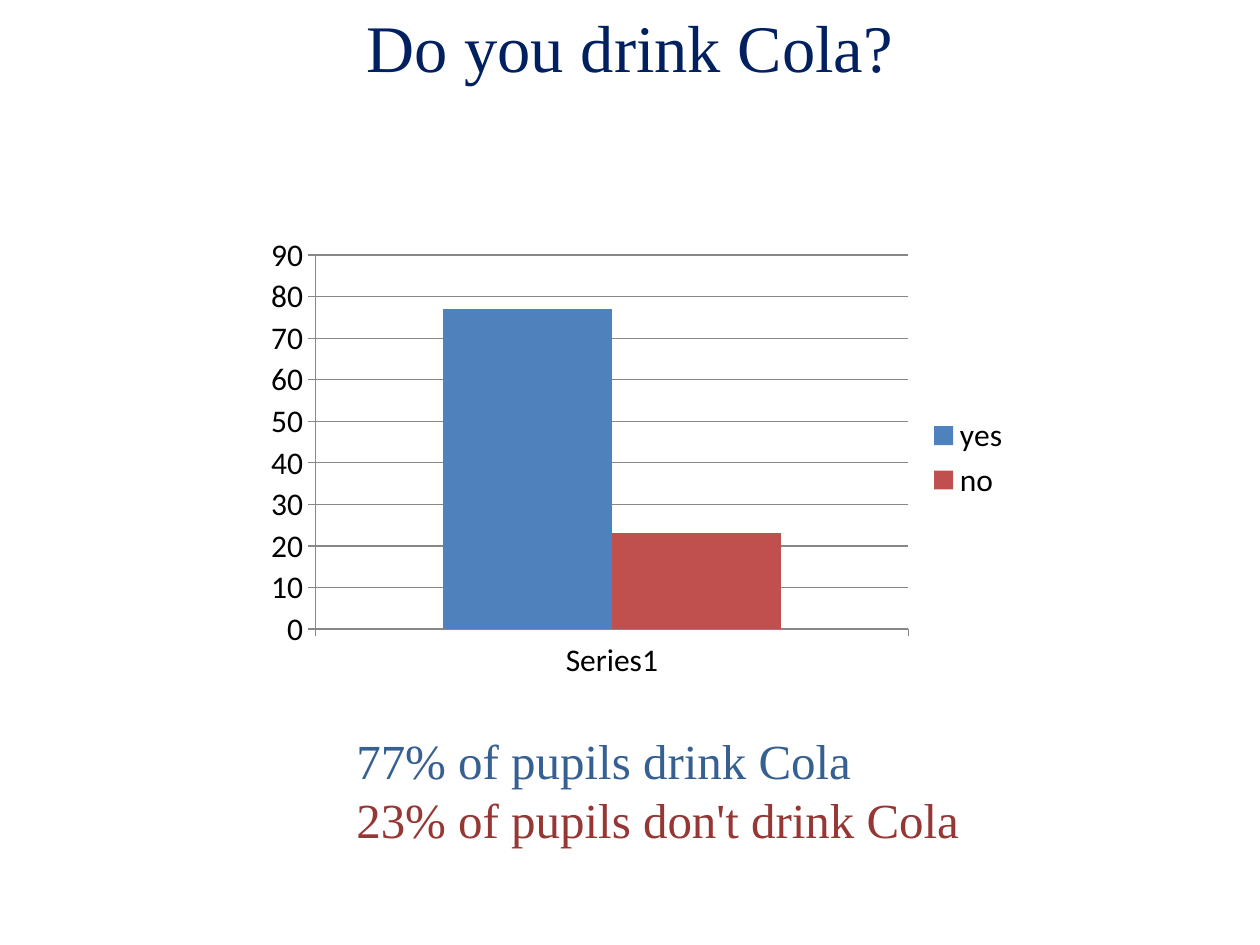
from pptx import Presentation
from pptx.chart.data import CategoryChartData
from pptx.dml.color import RGBColor
from pptx.enum.chart import XL_CHART_TYPE, XL_LEGEND_POSITION, XL_TICK_MARK
from pptx.enum.text import PP_ALIGN
from pptx.util import Inches, Pt

COLUMNS = XL_CHART_TYPE.COLUMN_CLUSTERED
RIGHT = XL_LEGEND_POSITION.RIGHT
OUTSIDE = XL_TICK_MARK.OUTSIDE
LEFT, CENTER = PP_ALIGN.LEFT, PP_ALIGN.CENTER


def rgb(value):
    return RGBColor.from_string(value)


class SurveySlide:
    text_font, chart_font = "Times New Roman", "Calibri"
    axis_color = "878787"

    def __init__(self, prs):
        self.width, self.height = prs.slide_width, prs.slide_height
        self.s = prs.slides.add_slide(prs.slide_layouts[6])

    def box(self, x, y, w, h):
        """Turn shares of the slide's size into lengths."""
        return (int(x * self.width), int(y * self.height),
                int(w * self.width), int(h * self.height))

    def text(self, area, lines, size, align=LEFT):
        """Write (text, colour) pairs, one paragraph each."""
        tf = self.s.shapes.add_textbox(*self.box(*area)).text_frame
        tf.word_wrap = True
        tf.text = "\n".join(line for line, _ in lines)
        for p, (_, color) in zip(tf.paragraphs, lines):
            p.alignment = align
            font = p.runs[0].font
            font.name, font.size = self.text_font, Pt(size)
            font.color.rgb = rgb(color)

    def line(self, fmt):
        fmt.line.color.rgb = rgb(self.axis_color)
        fmt.line.width = Pt(0.75)

    def columns(self, area, category, answers, top, step):
        """Draw one column per (name, value, colour) answer."""
        data = CategoryChartData(number_format="0")
        data.categories = [category]
        for name, value, _ in answers:
            data.add_series(name, [value])
        chart = self.s.shapes.add_chart(COLUMNS, *self.box(*area), data).chart
        chart.has_title = False
        chart.font.name, chart.font.size = self.chart_font, Pt(18)
        chart.font.color.rgb = rgb("000000")
        chart.has_legend = True
        chart.legend.position = RIGHT
        chart.legend.include_in_layout = False

        for axis in (chart.category_axis, chart.value_axis):
            axis.major_tick_mark = OUTSIDE
            self.line(axis.format)
        axis = chart.value_axis
        axis.minimum_scale, axis.maximum_scale, axis.major_unit = 0, top, step
        axis.has_major_gridlines = True
        self.line(axis.major_gridlines.format)

        plot = chart.plots[0]
        plot.gap_width, plot.overlap, plot.vary_by_categories = 150, 0, False
        for series, (_, _, color) in zip(plot.series, answers):
            series.format.fill.solid()
            series.format.fill.fore_color.rgb = rgb(color)


def main():
    prs = Presentation()
    prs.slide_width, prs.slide_height = Inches(10), Inches(7.5)
    slide = SurveySlide(prs)
    slide.text((0, 0, 1, 0.1), [("Do you drink Cola?", "002060")], 38, CENTER)
    slide.text((0.273, 0.767, 0.594, 0.139),
               [("77% of pupils drink Cola", "376092"),
                ("23% of pupils don't drink Cola", "953735")], 28)
    slide.columns((0.203, 0.24, 0.609, 0.489), "Series1",
                  [("yes", 77, "4F81BD"), ("no", 23, "C0504D")], 90, 10)
    prs.save("out.pptx")


if __name__ == "__main__":
    main()
